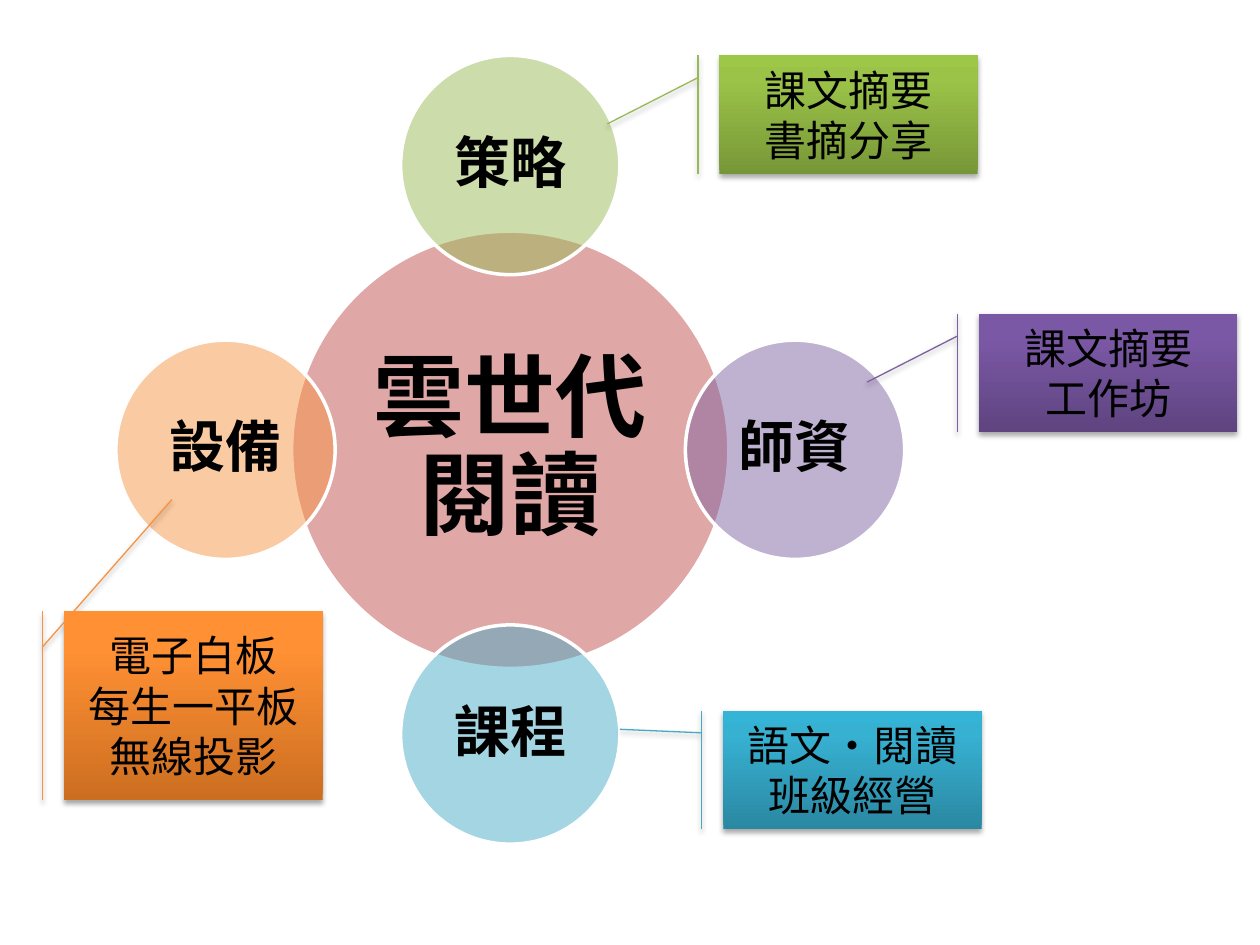
from lxml.etree import SubElement
from pptx import Presentation
from pptx.dml.color import RGBColor
from pptx.enum.shapes import MSO_SHAPE
from pptx.enum.text import MSO_ANCHOR, PP_ALIGN
from pptx.oxml.ns import qn
from pptx.util import Inches, Pt

FONT = "Noto Sans CJK SC"
CENTER_X, CENTER_Y = 4.05, 3.57
HUB_SIZE, SATELLITE_SIZE, ORBIT = 3.47, 1.74, 2.26
TEXT_RATIO = 0.707
CALLOUT_WIDTH = 2.05

SATELLITES = [
    ("策略", "9BBB59", 0, -1),
    ("師資", "8064A2", 1, 0),
    ("課程", "4BACC6", 0, 1),
    ("設備", "F79646", -1, 0),
]

CALLOUTS = [
    (5.71, 0.44, 0.94, (0.578, -0.434), ("779737", "9BC348", "9DC746"),
     "98B955", ["課文摘要", "書摘分享"]),
    (7.77, 2.49, 0.94, (0.578, -0.434), ("5F4480", "7B58A6", "7C57A8"),
     "7D60A0", ["課文摘要", "工作坊"]),
    (0.51, 4.85, 1.5, (-0.59, 0.417), ("CC6E20", "FF9034", "FF9136"),
     "F69240", ["電子白板", "每生一平板", "無線投影"]),
    (5.74, 5.64, 0.94, (0.158, -0.4), ("2A88A2", "37B1D2", "34B4D6"),
     "46AAC5", ["語文‧閱讀", "班級經營"]),
]


def color(value):
    """Turn a hex string into a colour."""
    return RGBColor.from_string(value)


def add_element(parent, tag, **attributes):
    """Append a DrawingML element with the given attributes."""
    values = {name: str(value) for name, value in attributes.items()}
    return SubElement(parent, qn(tag), values)


def write_lines(text_frame, lines, size, bold=False):
    """Write centred black lines, one paragraph each."""
    text_frame.word_wrap = True
    text_frame.vertical_anchor = MSO_ANCHOR.MIDDLE
    for index, line in enumerate(lines):
        paragraph = text_frame.add_paragraph() if index else text_frame.paragraphs[0]
        paragraph.alignment = PP_ALIGN.CENTER
        run = paragraph.add_run()
        run.text = line
        run.font.size = Pt(size)
        run.font.bold = bold
        run.font.name = FONT
        run.font.color.rgb = color("000000")
        add_element(run.font._element, "a:ea", typeface=FONT)


def add_circle(shapes, center_x, center_y, diameter, fill, label, size, inset):
    """Place a half-transparent circle and its label around a centre."""
    def square(side):
        """Give the box of a square around the centre."""
        return (Inches(center_x - side / 2), Inches(center_y - side / 2),
                Inches(side), Inches(side))

    circle = shapes.add_shape(MSO_SHAPE.OVAL, *square(diameter))
    circle.shadow.inherit = False
    circle.fill.solid()
    circle.fill.fore_color.rgb = color(fill)
    fill_color = circle._element.spPr.find(qn("a:solidFill"))[0]
    add_element(fill_color, "a:alpha", val=50000)
    circle.line.color.rgb = color("FFFFFF")
    circle.line.width = Pt(2)

    text_frame = shapes.add_textbox(*square(diameter * TEXT_RATIO)).text_frame
    text_frame.margin_left = text_frame.margin_right = Inches(inset)
    text_frame.margin_top = text_frame.margin_bottom = Inches(inset)
    write_lines(text_frame, [label], size, bold=True)
    text_frame.paragraphs[0].line_spacing = 0.9


def add_radial_diagram(slide):
    """Place the hub and the four circles on its rim as one group."""
    shapes = slide.shapes.add_group_shape().shapes
    add_circle(shapes, CENTER_X, CENTER_Y, HUB_SIZE, "C0504D", "雲世代閱讀", 52, 0.07)
    for label, fill, step_x, step_y in SATELLITES:
        add_circle(shapes, CENTER_X + step_x * ORBIT, CENTER_Y + step_y * ORBIT,
                   SATELLITE_SIZE, fill, label, 32, 0.04)


def fill_gradient(shape, colors):
    """Fill a shape with a gradient that runs from bottom to top."""
    shape.fill.gradient()
    gradient = shape._element.spPr.find(qn("a:gradFill"))
    for child in list(gradient):
        gradient.remove(child)
    stops = add_element(gradient, "a:gsLst")
    for position, value in zip((0, 80000, 100000), colors):
        stop = add_element(stops, "a:gs", pos=position)
        add_element(stop, "a:srgbClr", val=value)
    add_element(gradient, "a:lin", ang=270 * 60000, scaled=0)


def add_shadow(shape):
    """Give a shape a soft shadow straight below it."""
    shape.shadow.inherit = False
    effects = shape._element.spPr.find(qn("a:effectLst"))
    shadow = add_element(effects, "a:outerShdw", blurRad=Pt(3.1), dist=Pt(1.8),
                         dir=90 * 60000, rotWithShape=0)
    shadow_color = add_element(shadow, "a:srgbClr", val="000000")
    add_element(shadow_color, "a:alpha", val=35000)


def add_callout(slide, left, top, height, pointer, gradient, line, lines):
    """Place an accent-bar callout whose pointer ends at (down, across)."""
    callout = slide.shapes.add_shape(
        MSO_SHAPE.LINE_CALLOUT_1_ACCENT_BAR,
        Inches(left), Inches(top), Inches(CALLOUT_WIDTH), Inches(height))
    for index, value in enumerate((0.188, -0.083, *pointer)):
        callout.adjustments[index] = value
    fill_gradient(callout, gradient)
    callout.line.color.rgb = color(line)
    callout.line.width = Pt(0.75)
    add_shadow(callout)
    write_lines(callout.text_frame, lines, 24)


def main():
    """Build the slide and save it."""
    presentation = Presentation()
    presentation.slide_width = Inches(10)
    presentation.slide_height = Inches(7.5)
    slide = presentation.slides.add_slide(presentation.slide_layouts[6])
    add_radial_diagram(slide)
    for callout in CALLOUTS:
        add_callout(slide, *callout)
    presentation.save("out.pptx")


if __name__ == "__main__":
    main()
